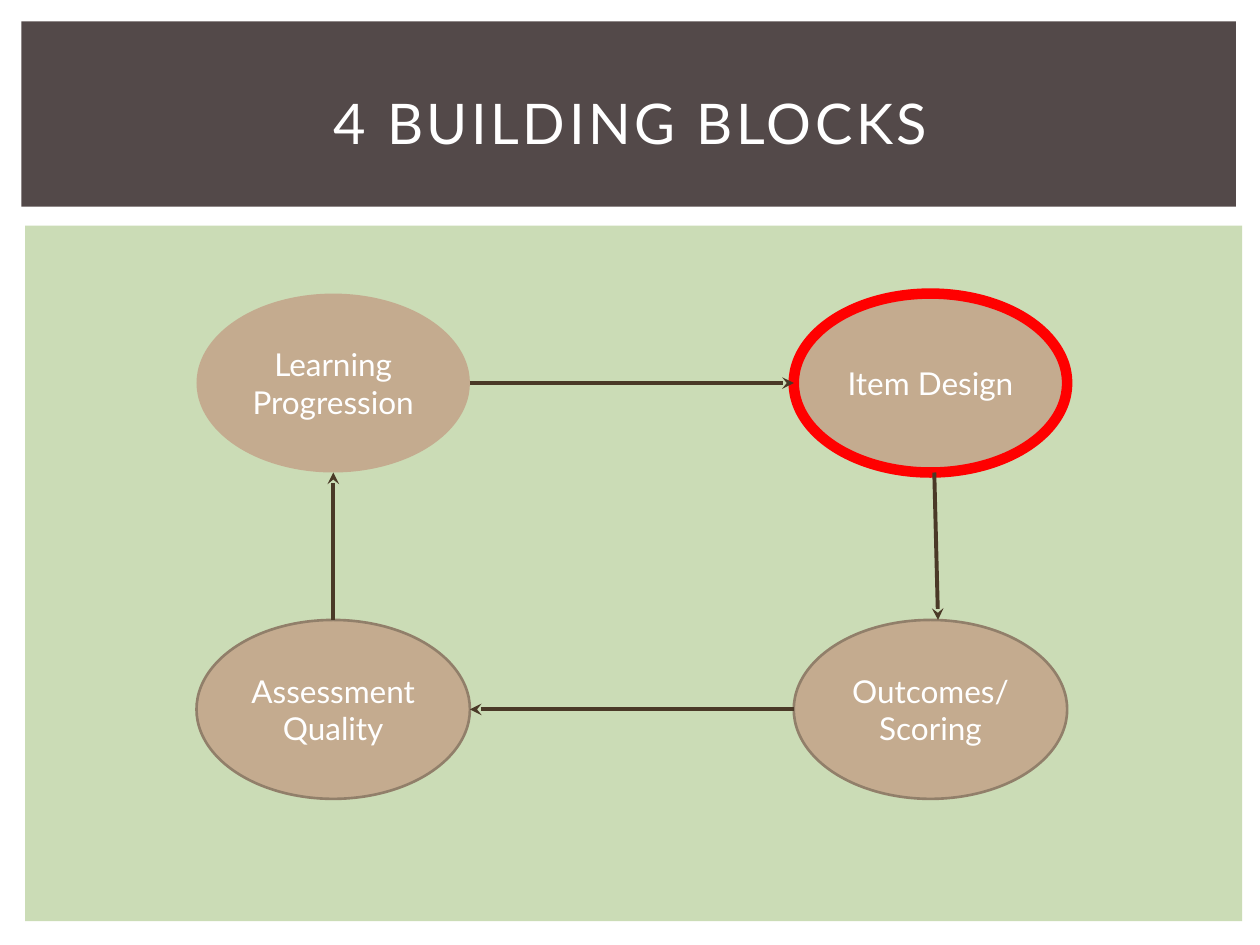
import pptx
import pptx.util
import pptx.dml.color
import pptx.enum.shapes
import pptx.enum.text
from dataclasses import dataclass
from lxml import etree

TITLE = "4 BUILDING BLOCKS"
# text, column, row, outline style
BLOCKS = [
    ("Learning Progression", 0, 0, None),
    ("Item Design", 1, 0, "focus"),
    ("Outcomes/Scoring", 1, 1, "plain"),
    ("Assessment Quality", 0, 1, "plain"),
]
# start block, end block, sideways nudge of each end
ARROWS = [
    (0, 1, 0, 0),
    (1, 2, 0.03, 0.06),
    (2, 3, 0, 0),
    (3, 0, 0, 0),
]


@dataclass(frozen=True)
class Theme:
    font: str = "Lato"
    head: int = 32
    body: int = 18
    track: int = 200
    panel: str = "CBDCB6"
    band: str = "534949"
    block: str = "C4AB8F"
    text: str = "FFFFFF"
    arrow: str = "4A3927"
    stroke: float = 2.25


THEME = Theme()
EDGES = {"focus": ("FF0000", 6), "plain": ("917F6A", 1.5)}

WIDE, HIGH = 10, 7.5
PANEL = (0.2, 1.79, 9.66, 5.52)
BAND = (0.17, 0.17, 9.64, 1.47)
HEAD = (0.42, 0.39, 9.17, 1.15)
LEFT, TOP = 1.56, 2.33
STEP_X, STEP_Y = 4.74, 2.59
BLOCK_W, BLOCK_H = 2.17, 1.42

KINDS = pptx.enum.shapes.MSO_SHAPE
inch = pptx.util.Inches


def color(code):
    return pptx.dml.color.RGBColor.from_string(code)


def add_form(slide, kind, box, fill, edge=None):
    form = slide.shapes.add_shape(kind, *map(inch, box))
    form.shadow.inherit = False
    form.fill.solid()
    form.fill.fore_color.rgb = color(fill)
    if edge:
        form.line.color.rgb = color(edge[0])
        form.line.width = pptx.util.Pt(edge[1])
    else:
        form.line.fill.background()
    return form


def set_text(form, text, size):
    frame = form.text_frame
    frame.text = text
    frame.word_wrap = True
    frame.vertical_anchor = pptx.enum.text.MSO_ANCHOR.MIDDLE
    line = frame.paragraphs[0]
    line.alignment = pptx.enum.text.PP_ALIGN.CENTER
    line.font.name = THEME.font
    line.font.size = pptx.util.Pt(size)
    line.font.color.rgb = color(THEME.text)
    return line


def add_title(slide):
    title = slide.shapes.title
    title.left, title.top, title.width, title.height = map(inch, HEAD)
    line = set_text(title, TITLE, THEME.head)
    line.runs[0]._r.get_or_add_rPr().set("spc", str(THEME.track))
    # Bring the title in front of the band.
    title.element.getparent().append(title.element)


def ends(start, end):
    """Return the facing edge points of two blocks in one row or column."""
    (_, col, row, _), (_, col2, row2, _) = BLOCKS[start], BLOCKS[end]
    go_x, go_y = col2 - col, row2 - row

    def point(col, row, sign):
        return (LEFT + col * STEP_X + BLOCK_W * (1 + sign * go_x) / 2,
                TOP + row * STEP_Y + BLOCK_H * (1 + sign * go_y) / 2)

    return point(col, row, 1), point(col2, row2, -1)


def add_arrow(slide, start, end, nudge, nudge2):
    (x, y), (x2, y2) = ends(start, end)
    arrow = slide.shapes.add_connector(
        pptx.enum.shapes.MSO_CONNECTOR.STRAIGHT,
        *map(inch, (x + nudge, y, x2 + nudge2, y2)))
    arrow.line.color.rgb = color(THEME.arrow)
    arrow.line.width = pptx.util.Pt(THEME.stroke)
    tip = etree.SubElement(arrow.line._get_or_add_ln(),
                           pptx.oxml.ns.qn("a:tailEnd"))
    tip.set("type", "stealth")
    etree.SubElement(arrow.element.spPr, pptx.oxml.ns.qn("a:effectLst"))


def main():
    deck = pptx.Presentation()
    deck.slide_width, deck.slide_height = inch(WIDE), inch(HIGH)
    slide = deck.slides.add_slide(deck.slide_layouts.get_by_name("Title Only"))

    add_form(slide, KINDS.RECTANGLE, PANEL, THEME.panel)
    add_form(slide, KINDS.RECTANGLE, BAND, THEME.band)
    add_title(slide)

    for text, col, row, edge in BLOCKS:
        box = (LEFT + col * STEP_X, TOP + row * STEP_Y, BLOCK_W, BLOCK_H)
        form = add_form(slide, KINDS.OVAL, box, THEME.block, EDGES.get(edge))
        set_text(form, text, THEME.body)

    for arrow in ARROWS:
        add_arrow(slide, *arrow)

    deck.save("out.pptx")


if __name__ == "__main__":
    main()
